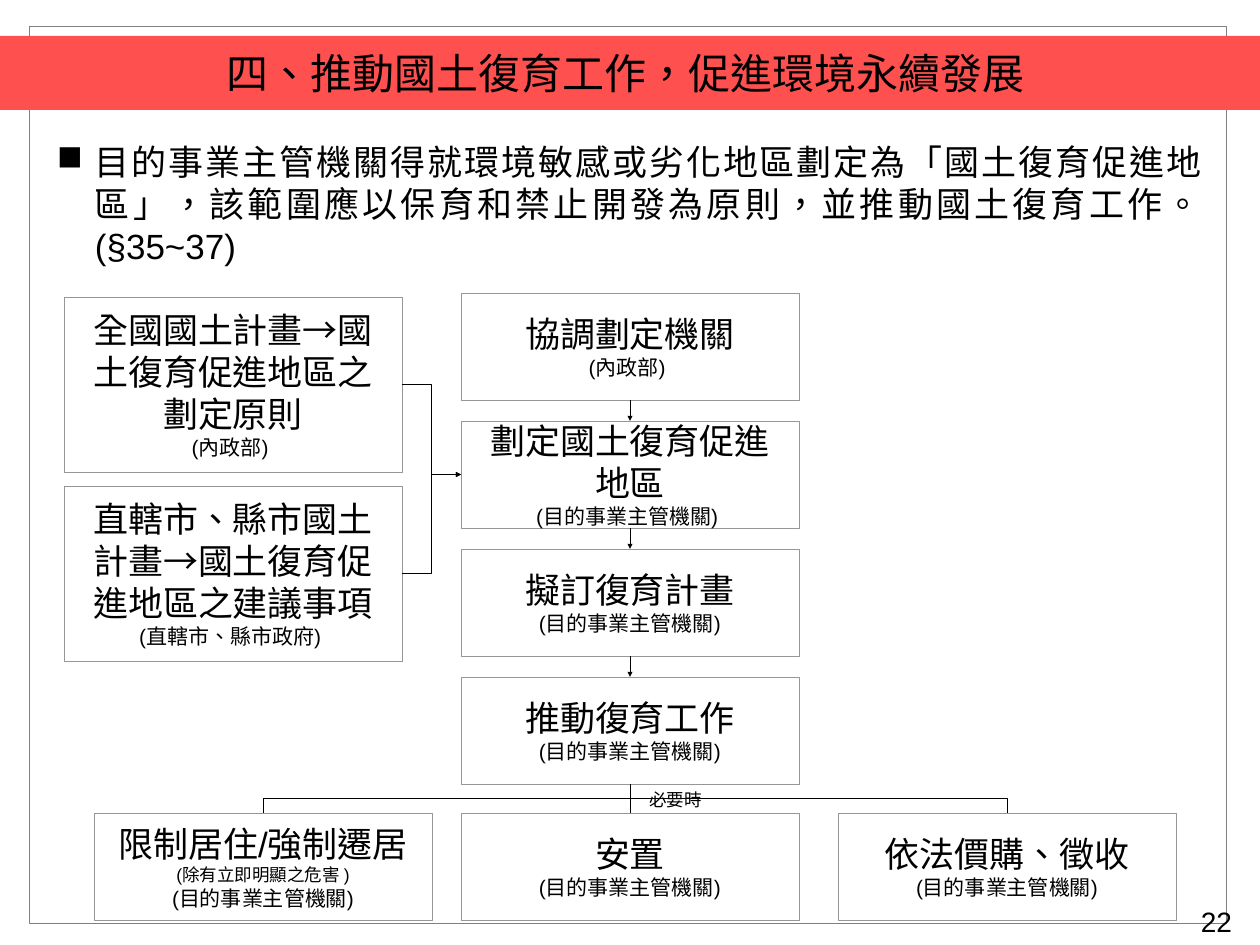
import pptx
import pptx.util
import pptx.dml.color
import pptx.enum.shapes
import pptx.enum.text
import pptx.oxml
import pptx.oxml.ns

RGB = pptx.dml.color.RGBColor
BLACK, RED = RGB(0, 0, 0), RGB(0xFF, 0x50, 0x50)
GREY, FRAME_GREY = RGB(0x96, 0x96, 0x96), RGB(0x80, 0x80, 0x80)
ALIGN = pptx.enum.text.PP_ALIGN
ANCHOR = pptx.enum.text.MSO_ANCHOR
KIND = pptx.enum.shapes.MSO_CONNECTOR
PX = 914400 / 63
TOP, LEFT, BOTTOM, RIGHT = range(4)

TITLE = "四、推動國土復育工作，促進環境永續發展 "
INTRO = ("目的事業主管機關得就環境敏感或劣化地區劃定為「國土復育促進地區」，"
         "該範圍應以保育和禁止開發為原則，並推動國土復育工作。(§35~37)")
AGENCY = [("(目的事業主管機關)", 24)]
BOX_W, STEP_H, BASIS_H = 338, 107, 175
STEP_X, STEP_Y, STEP_PITCH = 461, 293, 128
BASIS_X, BASIS_Y, BASIS_PITCH = 64, 297, 189
MEASURE_Y = 813

STEPS = [
    [[("協調劃定機關", 40)], [("(內政部) ", 24)]],
    [[("劃定國土復育促進地區", 40)], [("(目的事業主管機關) ", 24)]],
    [[("擬訂復育計畫", 40)], AGENCY],
    [[("推動復育工作", 40)], AGENCY],
]
BASES = [
    [[("全國國土計畫→國土復育促進地區之劃定原則", 40)], [("(內政部) ", 24)]],
    [[("直轄市、縣市國土計畫→國土復育促進地區之建議事項", 40)],
     [("(直轄市、縣市政府) ", 24)]],
]
MEASURES = [
    (94, [[("限制居住/強制遷居", 40), ("(除有立即明顯之危害 )", 20)], AGENCY]),
    (STEP_X, [[("安置", 40)], AGENCY]),
    (838, [[("依法價購、徵收", 40)], AGENCY]),
]


def px(n):
    return pptx.util.Emu(round(n * PX))


def write(shape, paragraphs, align=ALIGN.CENTER, anchor=ANCHOR.MIDDLE, font="Arial"):
    tf = shape.text_frame
    settings = {"word_wrap": True, "auto_size": pptx.enum.text.MSO_AUTO_SIZE.NONE,
                "vertical_anchor": anchor, "margin_left": px(13), "margin_right": px(13),
                "margin_top": px(6), "margin_bottom": px(6)}
    for name, value in settings.items():
        setattr(tf, name, value)
    for i, runs in enumerate(paragraphs):
        p = tf.add_paragraph() if i else tf.paragraphs[0]
        p.alignment = align
        for text, size in runs:
            r = p.add_run()
            r.text = text
            r.font.size, r.font.name = pptx.util.Pt(size), font
            r.font.color.rgb = BLACK
            r.font._element.set("lang", "zh-TW")
    return tf


def add_box(s, x, y, w, h, color=GREY):
    sp = s.shapes.add_shape(pptx.enum.shapes.MSO_SHAPE.RECTANGLE, px(x), px(y), px(w), px(h))
    sp.shadow.inherit = False
    sp.fill.background()
    sp.line.color.rgb, sp.line.width = color, pptx.util.Pt(0.75)
    return sp


def add_text(s, x, y, w, h, text, size, align):
    sp = s.shapes.add_textbox(px(x), px(y), px(w), px(h))
    return write(sp, [[(text, size)]], align, ANCHOR.TOP)


def add_link(s, kind, start, start_side, end, end_side, arrow):
    c = s.shapes.add_connector(kind, 0, 0, 0, 0)
    c.begin_connect(start, start_side)
    c.end_connect(end, end_side)
    c.line.color.rgb, c.line.width = BLACK, pptx.util.Pt(0.75)
    if arrow:
        tail = pptx.oxml.parse_xml(
            f'<a:tailEnd {pptx.oxml.ns.nsdecls("a")} type="triangle"/>')
        c.line._get_or_add_ln().append(tail)
    c._element.spPr.append(
        pptx.oxml.parse_xml(f'<a:effectLst {pptx.oxml.ns.nsdecls("a")}/>'))
    return c


def turn_downward(c):
    goes_left = c.end_x < c.begin_x
    mid_x, mid_y = c.left + c.width // 2, c.top + c.height // 2
    w, h = c.height, c.width
    c.left, c.top, c.width, c.height = mid_x - w // 2, mid_y - h // 2, w, h
    xfrm = c._element.spPr.find(pptx.oxml.ns.qn("a:xfrm"))
    xfrm.set("rot", "5400000" if goes_left else "16200000")
    xfrm.set("flipH", "0" if goes_left else "1")


def main():
    """Build the slide on restoring national land."""
    prs = pptx.Presentation()
    prs.slide_width, prs.slide_height = px(1260), px(945)
    s = prs.slides.add_slide(prs.slide_layouts[5])

    frame = add_box(s, 29, 26, 1197, 897, FRAME_GREY)
    s.shapes._spTree.insert(2, frame._element)
    title = s.shapes.title
    title.left, title.top, title.width, title.height = px(0), px(36), px(1260), px(74)
    title.fill.solid()
    title.fill.fore_color.rgb = RED
    write(title, [[(TITLE, 48)]], font="Noto Sans CJK SC")

    add_text(s, 878, 899, 367, 46, "22", 32, ALIGN.RIGHT)
    p = add_text(s, 44, 135, 1171, 139, INTRO, 40, ALIGN.JUSTIFY).paragraphs[0]
    pPr = p._p.get_or_add_pPr()
    pPr.set("marL", str(px(38)))
    pPr.set("indent", str(-px(38)))
    pPr.append(pptx.oxml.parse_xml(f'<a:buChar {pptx.oxml.ns.nsdecls("a")} char="■"/>'))

    steps = [add_box(s, STEP_X, STEP_Y + i * STEP_PITCH, BOX_W, STEP_H)
             for i in range(len(STEPS))]
    bases = [add_box(s, BASIS_X, BASIS_Y + i * BASIS_PITCH, BOX_W, BASIS_H)
             for i in range(len(BASES))]
    measures = [add_box(s, x, MEASURE_Y, BOX_W, STEP_H) for x, _ in MEASURES]
    texts = STEPS + BASES + [text for _, text in MEASURES]
    for sp, text in zip(steps + bases + measures, texts):
        write(sp, text)

    for upper, lower in zip(steps, steps[1:]):
        add_link(s, KIND.STRAIGHT, upper, BOTTOM, lower, TOP, True)
    for basis in bases:
        add_link(s, KIND.ELBOW, basis, RIGHT, steps[1], LEFT, True)
    restrict, resettle, purchase = measures
    add_link(s, KIND.STRAIGHT, steps[-1], BOTTOM, resettle, TOP, False)
    for measure in (restrict, purchase):
        turn_downward(add_link(s, KIND.ELBOW, steps[-1], BOTTOM, measure, TOP, False))
    add_text(s, 626, 783, 99, 33, "必要時", 20, ALIGN.CENTER)

    prs.save("out.pptx")


if __name__ == "__main__":
    main()
